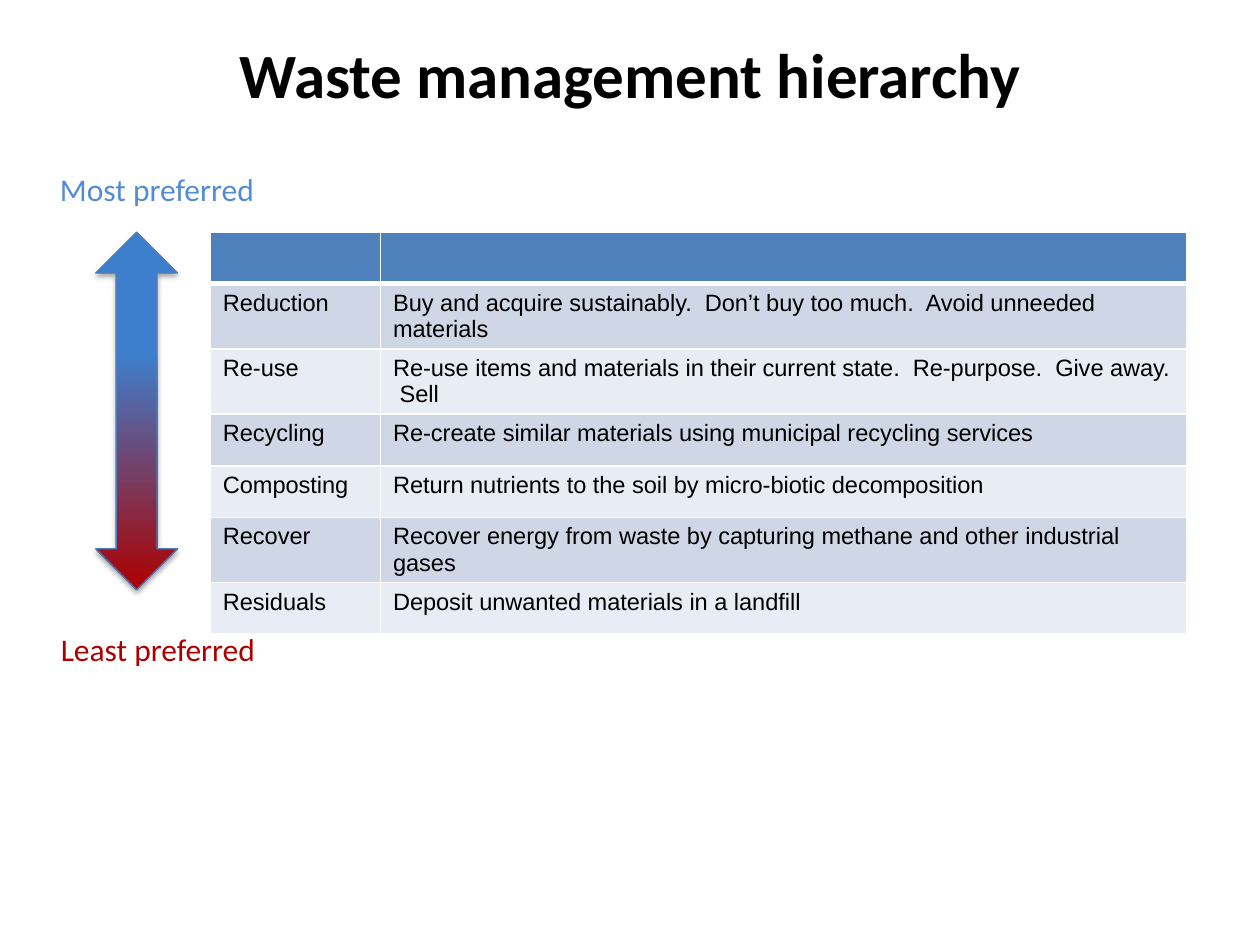
from dataclasses import dataclass

from lxml import etree
from pptx import Presentation
from pptx.dml.color import RGBColor
from pptx.enum.shapes import MSO_SHAPE
from pptx.enum.text import MSO_ANCHOR, PP_ALIGN
from pptx.oxml import parse_xml
from pptx.oxml.ns import nsdecls
from pptx.util import Cm, Pt

CENTER = PP_ALIGN.CENTER
MIDDLE = MSO_ANCHOR.MIDDLE
UP_DOWN_ARROW = MSO_SHAPE.UP_DOWN_ARROW

BLACK = "000000"
WHITE = "FFFFFF"
HEADER_FILL = "4F81BD"
BAND_FILLS = ("CFD7E7", "E8ECF4")
ARROW_BLUE = "3E7FCD"
ARROW_RED = "AC0000"
ARROW_STOPS = ((0, ARROW_BLUE), (34, ARROW_BLUE), (100, ARROW_RED))


@dataclass(frozen=True)
class Level:
    name: str
    action: str


@dataclass(frozen=True)
class Label:
    text: str
    left: float
    top: float
    color: str


LEVELS = (
    Level("Reduction", "Buy and acquire sustainably.  Don’t buy too much.  Avoid unneeded materials"),
    Level("Re-use", "Re-use items and materials in their current state.  Re-purpose.  Give away.  Sell"),
    Level("Recycling", "Re-create similar materials using municipal recycling services"),
    Level("Composting", "Return nutrients to the soil by micro-biotic decomposition"),
    Level("Recover", "Recover energy from waste by capturing methane and other industrial gases"),
    Level("Residuals", "Deposit unwanted materials in a landfill"),
)
LABELS = (
    Label("Most preferred", 0.79, 3.3, "538CD5"),
    Label("Least preferred", 0.81, 12.57, ARROW_RED),
)


def rgb(color: str) -> RGBColor:
    return RGBColor.from_string(color)


def set_font(paragraph, name: str, size: float, color: str, bold: bool = False) -> None:
    font = paragraph.font
    font.name = name
    font.size = Pt(size)
    font.bold = bold
    font.color.rgb = rgb(color)


def add_title(page, text: str) -> None:
    title = page.shapes.title
    title.left, title.top, title.width, title.height = Cm(1.27), Cm(0.76), Cm(22.86), Cm(1.42)
    title.text_frame.text = text
    title.text_frame.vertical_anchor = MIDDLE
    paragraph = title.text_frame.paragraphs[0]
    paragraph.alignment = CENTER
    set_font(paragraph, "Calibri", 36, BLACK, bold=True)


def add_label(page, label: Label) -> None:
    box = page.shapes.add_textbox(Cm(label.left), Cm(label.top), Cm(4.75), Cm(1.02))
    box.text_frame.word_wrap = True
    paragraph = box.text_frame.paragraphs[0]
    paragraph.text = label.text
    paragraph.alignment = CENTER
    set_font(paragraph, "Calibri", 18, label.color)


def style_cell(cell, fill: str, edges: dict[str, float]) -> None:
    cell.fill.solid()
    cell.fill.fore_color.rgb = rgb(fill)
    properties = cell._tc.get_or_add_tcPr()
    for index, (side, width) in enumerate(edges.items()):
        properties.insert(index, parse_xml(
            f'<a:ln{side} {nsdecls("a")} w="{Pt(width)}"><a:solidFill>'
            f'<a:srgbClr val="{WHITE}"/></a:solidFill></a:ln{side}>'))


def add_hierarchy(page, levels: tuple[Level, ...]) -> None:
    row_height = Cm(1.04)
    row_count = len(levels) + 1
    table = page.shapes.add_table(
        row_count, 2, Cm(4.24), Cm(4.68), Cm(19.69), row_height * row_count).table
    for column, width in zip(table.columns, (3.43, 16.26)):
        column.width = Cm(width)
    for cell in table.rows[0].cells:
        style_cell(cell, HEADER_FILL, {"L": 1, "R": 1, "T": 1, "B": 3})
    for index, level in enumerate(levels):
        edges = {"L": 1, "R": 1, "T": 1 if index else 3, "B": 1}
        for cell, text in zip(table.rows[index + 1].cells, (level.name, level.action)):
            cell.text = text
            set_font(cell.text_frame.paragraphs[0], "Arial", 13.5, BLACK)
            style_cell(cell, BAND_FILLS[index % 2], edges)


def add_preference_arrow(page) -> None:
    arrow = page.shapes.add_shape(UP_DOWN_ARROW, Cm(1.93), Cm(4.68), Cm(1.65), Cm(7.21))
    arrow.line.color.rgb = rgb("4A7DBA")
    arrow.line.width = Pt(0.75)
    arrow.fill.gradient()
    arrow.fill.gradient_angle = 270
    stops = arrow._element.spPr.find(".//{*}gsLst")
    for stop in list(stops):
        stops.remove(stop)
    for position, color in ARROW_STOPS:
        stops.append(parse_xml(
            f'<a:gs {nsdecls("a")} pos="{position * 1000}"><a:srgbClr val="{color}"/></a:gs>'))
    arrow.shadow.inherit = False
    effects = arrow._element.spPr.find("{*}effectLst")
    shadow = etree.SubElement(
        effects, effects.tag.replace("effectLst", "outerShdw"),
        blurRad=str(Pt(3.1)), dist=str(Pt(1.8)), dir="5400000", rotWithShape="0")
    shadow.append(parse_xml(
        f'<a:srgbClr {nsdecls("a")} val="{BLACK}"><a:alpha val="35000"/></a:srgbClr>'))


def main() -> None:
    deck = Presentation()
    deck.slide_width, deck.slide_height = Cm(25.4), Cm(19.05)
    page = deck.slides.add_slide(deck.slide_layouts[5])
    add_title(page, "Waste management hierarchy")
    add_hierarchy(page, LEVELS)
    add_preference_arrow(page)
    for label in LABELS:
        add_label(page, label)
    deck.save("out.pptx")


if __name__ == "__main__":
    main()
